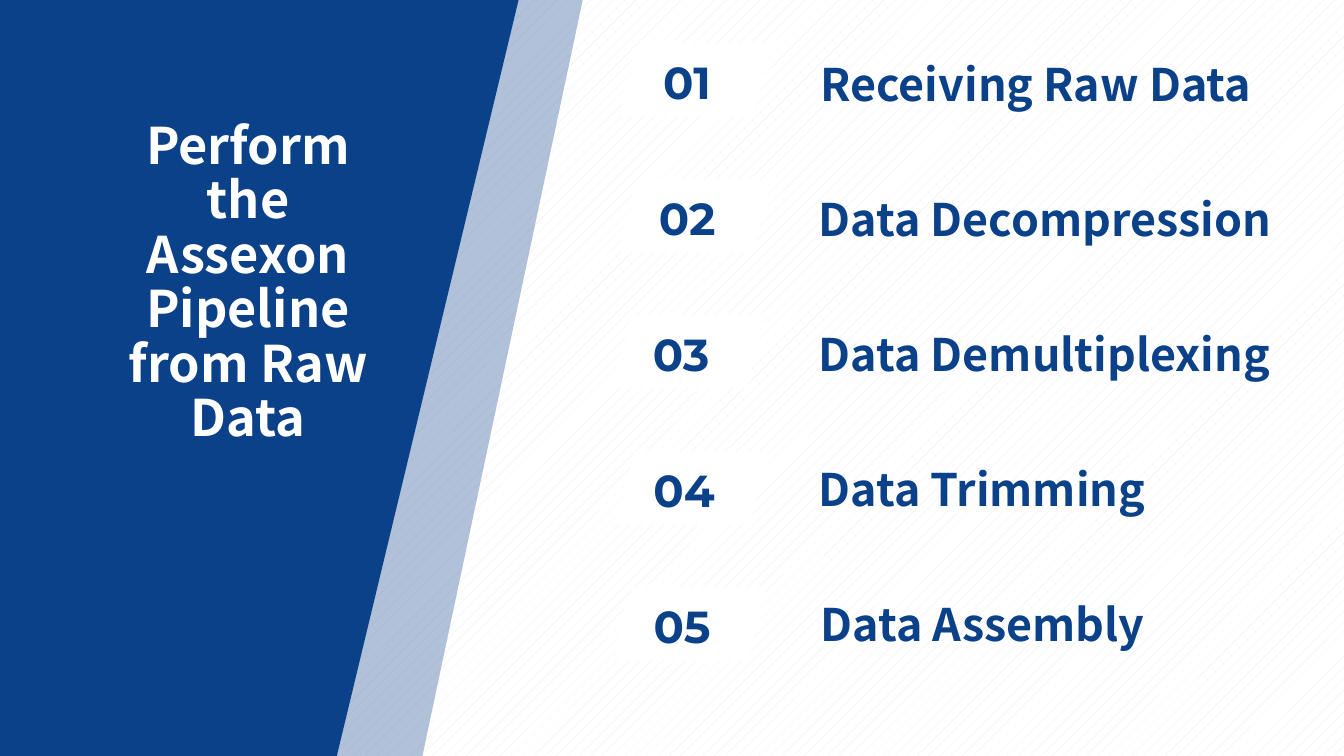
from pptx import Presentation
from pptx.dml.color import RGBColor
from pptx.enum.dml import MSO_PATTERN
from pptx.enum.shapes import MSO_SHAPE
from pptx.enum.text import MSO_AUTO_SIZE, PP_ALIGN
from pptx.util import Inches, Pt
from lxml import etree

RECTANGLE = MSO_SHAPE.RECTANGLE
PARALLELOGRAM = MSO_SHAPE.PARALLELOGRAM
DOTS = MSO_PATTERN.PERCENT_10
FIT_SHAPE = MSO_AUTO_SIZE.SHAPE_TO_FIT_TEXT
CENTER, LEFT = PP_ALIGN.CENTER, PP_ALIGN.LEFT

COLORS = {"blue": "0B4189", "white": "FFFFFF", "cream": "EEECE1"}
HEADING_FONT = "Noto Sans CJK SC"
NUMBER_FONT = "Montserrat"


def add_shape(shapes, kind, left, top, width, height, color):
    shape = shapes.add_shape(kind, Inches(left), Inches(top), Inches(width), Inches(height))
    shape.shadow.inherit = False
    shape.line.fill.background()
    shape.fill.solid()
    shape.fill.fore_color.rgb = RGBColor.from_string(COLORS[color])
    return shape


def add_text(shapes, text, left, top, width, height, font, size, color, align, wrap=True):
    box = shapes.add_textbox(Inches(left), Inches(top), Inches(width), Inches(height))
    frame = box.text_frame
    frame.word_wrap = wrap
    frame.auto_size = FIT_SHAPE
    frame.text = text
    paragraph = frame.paragraphs[0]
    paragraph.alignment = align
    run_font = paragraph.runs[0].font
    run_font.name = font
    run_font.size = Pt(size)
    run_font.bold = True
    run_font.color.rgb = RGBColor.from_string(COLORS[color])
    # East Asian typeface follows the Latin one
    latin = run_font._element.find("{*}latin")
    east_asian = etree.Element(latin.tag.replace("latin", "ea"), typeface=font)
    latin.addnext(east_asian)
    return paragraph


presentation = Presentation()
presentation.slide_width = Inches(13.33)
presentation.slide_height = Inches(7.5)
slide = presentation.slides.add_slide(presentation.slide_layouts[6])

# Dotted background and panel
panel = add_shape(slide.shapes, RECTANGLE, 0.05, 0, 13.35, 7.5, "white")
for fill in (slide.background.fill, panel.fill):
    fill.patterned()
    fill.pattern = DOTS
    fill.fore_color.rgb = RGBColor.from_string(COLORS["cream"])
    fill.back_color.rgb = RGBColor.from_string(COLORS["white"])

# Slanted blue bands
bands = slide.shapes.add_group_shape().shapes
pale_band = add_shape(bands, PARALLELOGRAM, -3.34, -2.22, 9.59, 11.31, "blue")
color_element = pale_band.fill._xPr.find("{*}solidFill")[0]
etree.SubElement(color_element, color_element.tag.replace("srgbClr", "alpha"), val="32000")
add_shape(bands, PARALLELOGRAM, -2.93, -0.65, 8.23, 8.56, "blue")

# Numbered steps: badge left, label left, label width, label
steps = [
    (6.14, 8.04, 4.65, "Receiving Raw Data"),
    (6.14, 8.02, 4.89, "Data Decompression"),
    (6.08, 8.02, 4.88, "Data Demultiplexing"),
    (6.11, 8.02, 3.57, "Data Trimming"),
    (6.09, 8.04, 3.57, "Data Assembly"),
]
for index, (badge_left, label_left, label_width, label) in enumerate(steps):
    top = 0.43 + index * 1.35
    badge = slide.shapes.add_group_shape().shapes
    add_shape(badge, PARALLELOGRAM, badge_left, top, 1.51, 0.72, "white")
    add_text(badge, f"{index + 1:02}", badge_left + 0.08, top + 0.06, 1.19, 0.64,
             NUMBER_FONT, 32, "blue", CENTER)
    add_text(slide.shapes, label, label_left, 0.51 + index * 1.34, label_width, 0.64,
             HEADING_FONT, 32, "blue", LEFT, wrap=False)

# Title
title = add_text(slide.shapes, "Perform the Assexon Pipeline from Raw Data",
                 0.99, 1.15, 2.94, 3.37, HEADING_FONT, 36, "white", CENTER)
title.line_spacing = 0.9

presentation.save("out.pptx")
